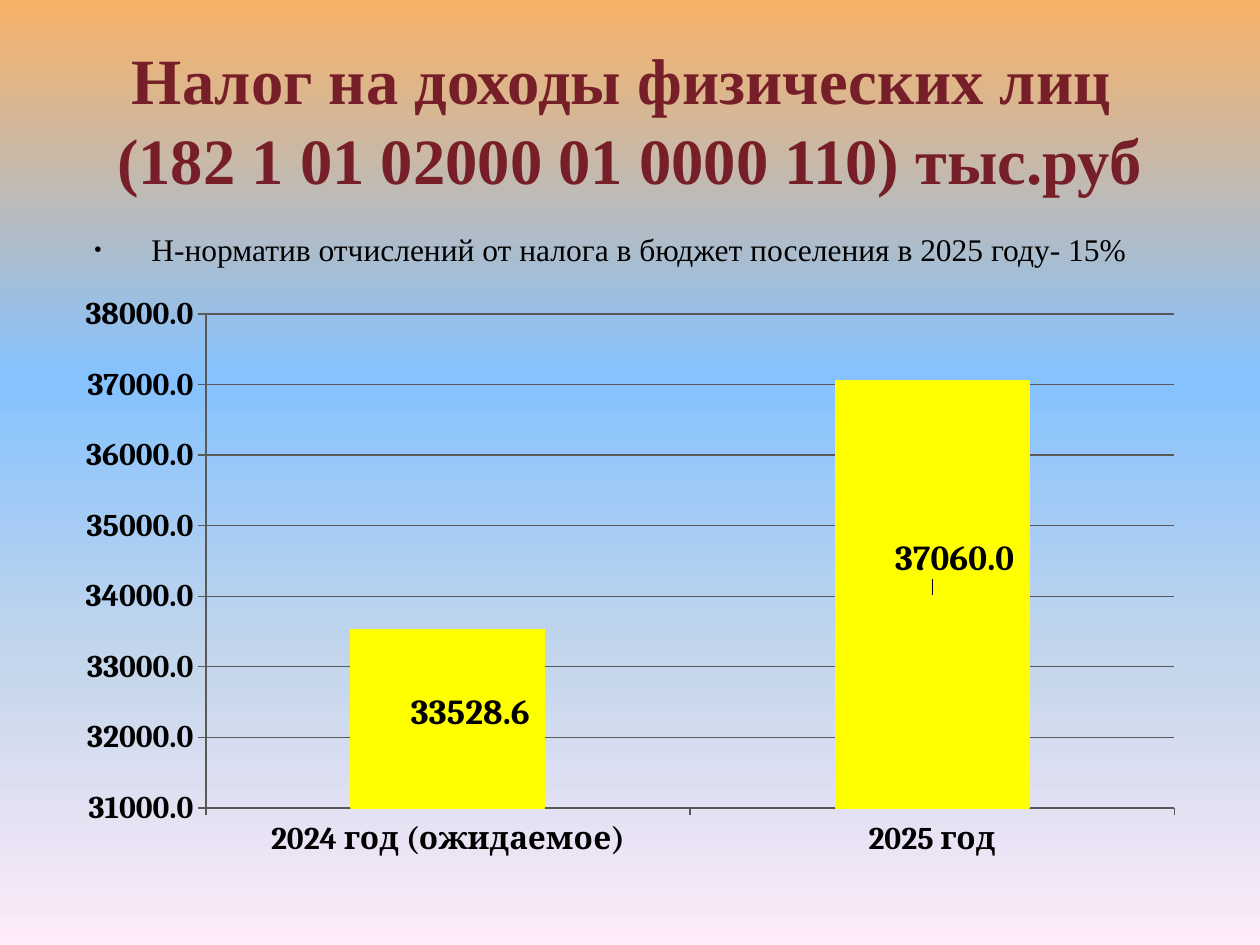
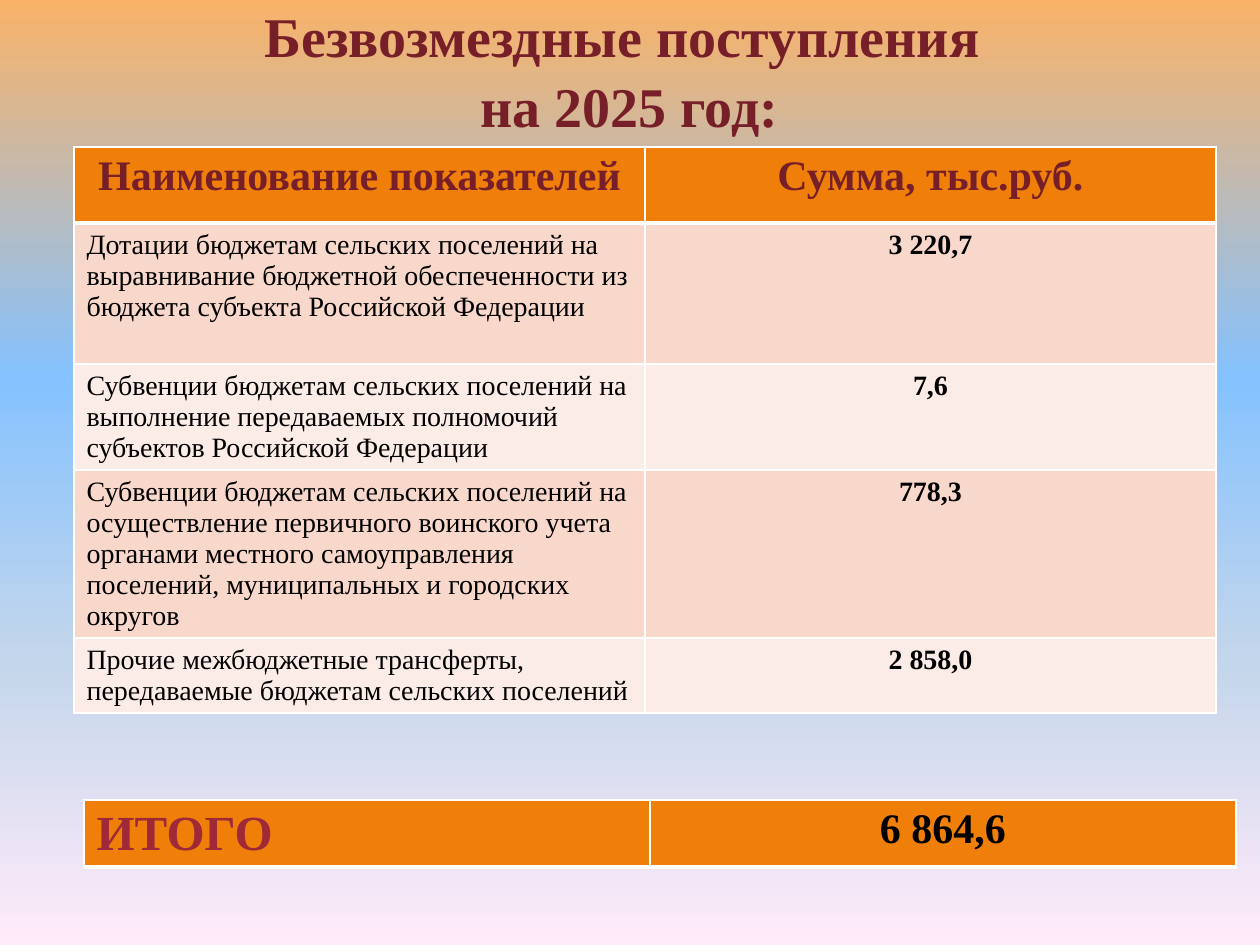
from lxml import etree
from pptx import Presentation
from pptx import util as u
from pptx.chart.data import CategoryChartData
from pptx.dml.color import RGBColor
from pptx.enum import chart as ch, text
from pptx.oxml import parse_xml
from pptx.oxml.ns import nsdecls, qn

PX = 914400 // 126
SLIDE = (1260, 945)
COLORS = {
    "maroon": "771F28", "red": "9F2936", "orange": "F07F09", "yellow": "FFFF00",
    "rose": "F9D8CC", "pale": "FCECE7", "white": "FFFFFF", "black": "000000",
    "grid": "595959",
}
BACKDROP = [(0, "F9B268"), (40, "85C2FF"), (70, "C4D6EB"), (100, "FFEBFA")]
SERIF, CHART_FONT = "Times New Roman", "Cambria"
HEADING = {"name": SERIF, "size": 24, "bold": True, "color": "maroon"}
ITEM = {"name": SERIF, "size": 16, "bold": False, "color": "black"}
AMOUNT = {**ITEM, "bold": True}
CENTER = text.PP_ALIGN.CENTER
LEFT = text.PP_ALIGN.LEFT


def px(*lengths):
    return [u.Emu(length * PX) for length in lengths]


def rgb(name):
    return RGBColor.from_string(COLORS[name])


def set_all(target, values):
    for name, value in values.items():
        setattr(target, name, value)


def style_font(font, style):
    for name, value in style.items():
        if name == "color":
            font.color.rgb = rgb(value)
        else:
            setattr(font, name, u.Pt(value) if name == "size" else value)


def paint_backdrop(master):
    fill = master.background.fill
    fill.gradient()
    fill.gradient_angle = 270
    stops = master.element.find(".//" + qn("a:gsLst"))
    for stop in list(stops):
        stops.remove(stop)
    for percent, color in BACKDROP:
        stop = etree.SubElement(stops, qn("a:gs"), pos=str(percent * 1000))
        etree.SubElement(stop, qn("a:srgbClr"), val=color)


def add_titled_slide(prs, title, box, size):
    slide = prs.slides.add_slide(prs.slide_layouts[5])
    heading = slide.shapes.title
    set_all(heading, dict(zip(("left", "top", "width", "height"), px(*box))))
    frame = heading.text_frame
    frame.text = title
    set_all(frame, {"word_wrap": True, "auto_size": text.MSO_AUTO_SIZE.NONE,
                    "vertical_anchor": text.MSO_ANCHOR.MIDDLE})
    paragraph = frame.paragraphs[0]
    set_all(paragraph, {"alignment": CENTER, "line_spacing": 1.04})
    for run in paragraph.runs:
        style_font(run.font, {**HEADING, "size": size})
    return slide


def add_bullet_note(slide, box, note):
    frame = slide.shapes.add_textbox(*px(*box)).text_frame
    frame.word_wrap = True
    paragraph = frame.paragraphs[0]
    paragraph.text = note
    props = paragraph._p.get_or_add_pPr()
    props.set("marL", str(76 * PX))
    props.set("indent", str(-57 * PX))
    color = etree.SubElement(props, qn("a:buClr"))
    etree.SubElement(color, qn("a:srgbClr"), val=COLORS["black"])
    etree.SubElement(props, qn("a:buSzPct"), val="65000")
    etree.SubElement(props, qn("a:buFont"), typeface="Arial")
    etree.SubElement(props, qn("a:buChar"), char="•")
    style_font(paragraph.runs[0].font, {**ITEM, "size": 18})


def chart_layout(**values):
    items = "".join(f'<c:{name} val="{value}"/>' for name, value in values.items())
    return parse_xml(f'<c:layout {nsdecls("c")}><c:manualLayout>{items}'
                     "</c:manualLayout></c:layout>")


def style_axis(axis):
    axis.major_tick_mark = ch.XL_TICK_MARK.OUTSIDE
    axis.format.line.color.rgb = rgb("grid")
    style_font(axis.tick_labels.font, {"name": CHART_FONT, "size": 18, "bold": True, "color": "black"})


def place_label(point, dx, dy):
    label = point.data_label
    style_font(label.font, {"name": CHART_FONT, "size": 20, "bold": True, "color": "black"})
    index = label.font._element.getparent().getparent().getparent().getparent().find(qn("c:idx"))
    index.addnext(parse_xml(f'<c:numFmt {nsdecls("c")} formatCode="0.0" sourceLinked="0"/>'))
    index.addnext(chart_layout(x=dx, y=dy))


def add_tax_chart(slide, box):
    tax = CategoryChartData(number_format="0.0")
    tax.categories = ["2024 год (ожидаемое)", "2025 год"]
    tax.add_series("Series 1", [33528.6, 37060])
    chart = slide.shapes.add_chart(ch.XL_CHART_TYPE.COLUMN_STACKED, *px(*box), tax).chart
    set_all(chart, {"has_legend": False, "has_title": False})
    style_font(chart.font, {"name": CHART_FONT, "size": 18, "color": "black"})

    plot = chart.plots[0]
    set_all(plot, {"gap_width": 150, "overlap": 100, "vary_by_categories": False})
    amounts = chart.value_axis
    set_all(amounts, {"minimum_scale": 31000, "maximum_scale": 38000,
                      "major_unit": 1000, "has_major_gridlines": True})
    set_all(amounts.tick_labels, {"number_format": "0.0", "number_format_is_linked": False})
    amounts.major_gridlines.format.line.color.rgb = rgb("grid")
    for axis in (amounts, chart.category_axis):
        style_axis(axis)

    bars = plot.series[0]
    bars.format.fill.solid()
    bars.format.fill.fore_color.rgb = rgb("yellow")
    bars.format.line.color.rgb = rgb("yellow")
    bars.format.line.width = u.Pt(0.75)
    for position, shift in enumerate([(0.02, -0.01), (0.02, -0.06)]):
        place_label(bars.points[position], *shift)

    area = chart._chartSpace.find(".//" + qn("c:plotArea"))
    for old in area.findall(qn("c:layout")):
        area.remove(old)
    area.insert(0, chart_layout(layoutTarget="inner", xMode="edge", yMode="edge",
                                x=0.126, y=0.053, w=0.854, h=0.843))


def style_cell(cell, words, style, align, fill, bottom=1):
    cell.text = words
    paragraph = cell.text_frame.paragraphs[0]
    paragraph.alignment = align
    style_font(paragraph.runs[0].font, style)
    cell.fill.solid()
    cell.fill.fore_color.rgb = rgb(fill)
    props = cell._tc.get_or_add_tcPr()
    for place, (side, width) in enumerate(zip("LRTB", (1, 1, 1, bottom))):
        line = etree.Element(qn("a:ln" + side), w=str(u.Pt(width)))
        solid = etree.SubElement(line, qn("a:solidFill"))
        etree.SubElement(solid, qn("a:srgbClr"), val=COLORS["white"])
        props.insert(place, line)


def add_plain_table(slide, left, top, columns, rows):
    box = px(left, top, sum(columns), sum(rows))
    table = slide.shapes.add_table(len(rows), len(columns), *box).table
    set_all(table, {"first_row": False, "horz_banding": False})
    for column, width in zip(table.columns, px(*columns)):
        column.width = width
    for row, height in zip(table.rows, px(*rows)):
        row.height = height
    return table


def add_receipts_table(slide, left, top):
    receipts = [
        ("Дотации бюджетам сельских поселений на выравнивание бюджетной "
         "обеспеченности из бюджета субъекта Российской Федерации", "3 220,7"),
        ("Субвенции бюджетам сельских поселений на выполнение передаваемых "
         "полномочий субъектов Российской Федерации", "7,6"),
        ("Субвенции бюджетам сельских поселений на осуществление первичного "
         "воинского учета органами местного самоуправления поселений, "
         "муниципальных и городских округов", "778,3"),
        ("Прочие межбюджетные трансферты, передаваемые бюджетам сельских "
         "поселений", "2 858,0"),
    ]
    table = add_plain_table(slide, left, top, [571, 571], [76, 141, 106, 168, 75])
    for column, header in enumerate(["Наименование показателей", "Сумма, тыс.руб."]):
        style_cell(table.cell(0, column), header, HEADING, CENTER, "orange", 3)
    for row, (item, amount) in enumerate(receipts, 1):
        band = "rose" if row % 2 else "pale"
        style_cell(table.cell(row, 0), item, ITEM, LEFT, band)
        style_cell(table.cell(row, 1), amount, AMOUNT, CENTER, band)


def add_total_table(slide, left, top):
    table = add_plain_table(slide, left, top, [566, 586], [66])
    style_cell(table.cell(0, 0), "ИТОГО", {**HEADING, "size": 28, "color": "red"}, LEFT, "orange", 3)
    style_cell(table.cell(0, 1), "6 864,6", {**HEADING, "color": "black"}, CENTER, "orange", 3)


def build_income_tax(prs):
    slide = add_titled_slide(prs, "Налог на доходы физических лиц \v(182 1 01 02000 01 0000 110) тыс.руб",
                             (63, 38, 1134, 158), 36.9)
    add_bullet_note(slide, (63, 224, 1134, 52),
                    "Н-норматив отчислений от налога в бюджет поселения в 2025 году- 15%")
    add_tax_chart(slide, (63, 283, 1134, 586))


def build_free_receipts(prs):
    slide = add_titled_slide(prs, "Безвозмездные поступления\v на 2025 год:", (63, 0, 1119, 137), 32)
    add_receipts_table(slide, 74, 147)
    add_total_table(slide, 84, 800)


def main():
    prs = Presentation()
    prs.slide_width, prs.slide_height = px(*SLIDE)
    paint_backdrop(prs.slide_master)
    build_income_tax(prs)
    build_free_receipts(prs)
    prs.save("out.pptx")


if __name__ == "__main__":
    main()
